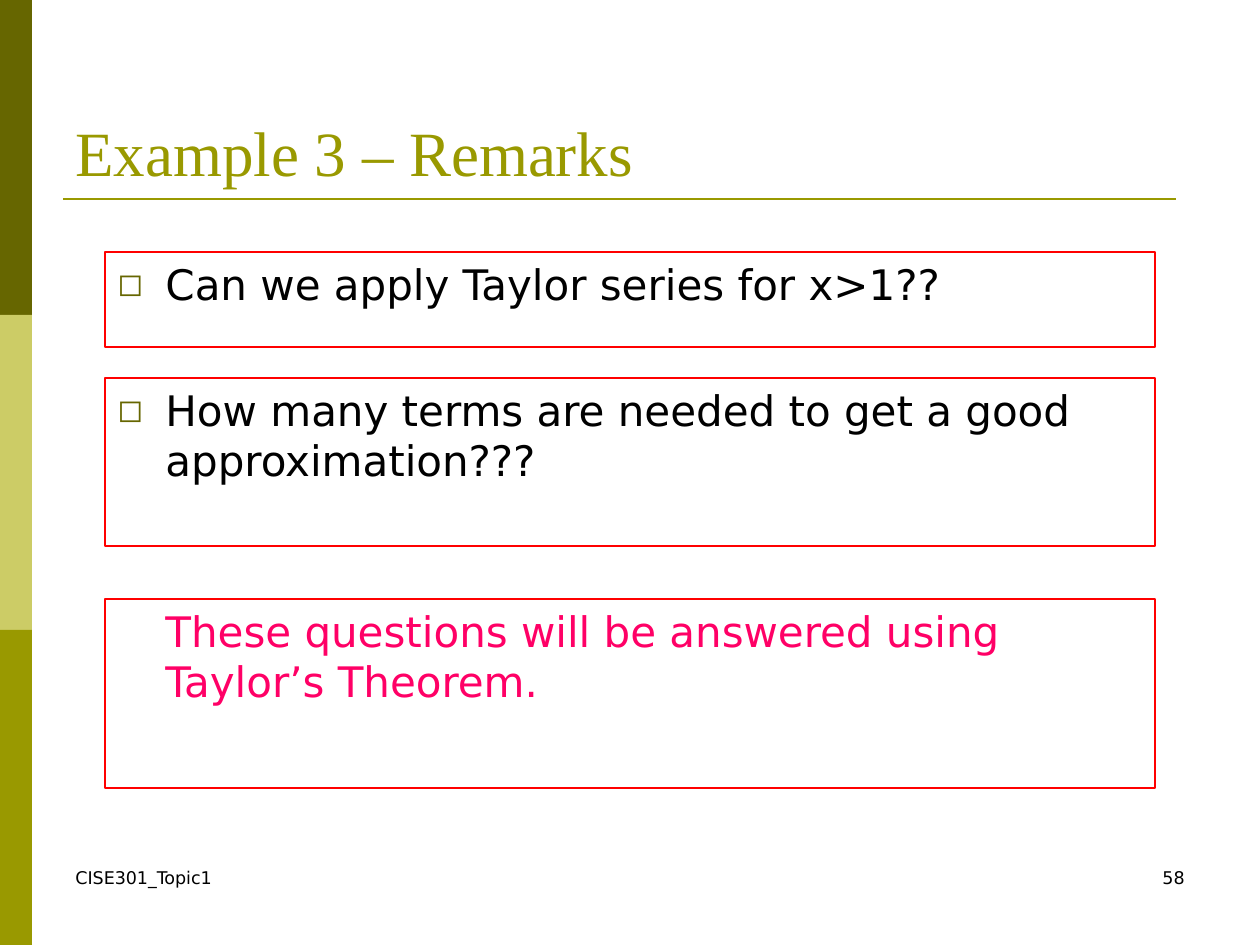
from lxml.etree import SubElement
from pptx import Presentation
from pptx.dml.color import RGBColor
from pptx.enum.shapes import MSO_CONNECTOR, MSO_SHAPE
from pptx.enum.text import MSO_ANCHOR, PP_ALIGN
from pptx.oxml.ns import qn
from pptx.util import Emu, Pt

SCALE = 914400 / 126
COLORS = {
    "dark": "666600",
    "light": "CCCC66",
    "olive": "999900",
    "border": "FF0000",
    "text": "000000",
    "answer": "FF0066",
}


def px(*lengths):
    return [Emu(round(length * SCALE)) for length in lengths]


def write(frame, text, font, size, color, align=PP_ALIGN.LEFT, anchor=MSO_ANCHOR.TOP):
    for name, value in {"word_wrap": True, "vertical_anchor": anchor}.items():
        setattr(frame, name, value)
    paragraph = frame.paragraphs[0]
    paragraph.alignment = align
    run = paragraph.add_run()
    run.text = text
    for name, value in {"name": font, "size": Pt(size)}.items():
        setattr(run.font, name, value)
    run.font.color.rgb = RGBColor.from_string(COLORS[color])
    return paragraph


deck = Presentation()
deck.slide_width, deck.slide_height = px(1260, 945)
slide = deck.slides.add_slide(deck.slide_layouts[6])
shapes = slide.shapes

for index, color in enumerate(["dark", "light", "olive"]):
    band = shapes.add_shape(MSO_SHAPE.RECTANGLE, *px(0, 315 * index, 32, 315))
    band.shadow.inherit = False
    band.fill.solid()
    band.fill.fore_color.rgb = RGBColor.from_string(COLORS[color])
    band.line.fill.background()

title_rule = shapes.add_connector(MSO_CONNECTOR.STRAIGHT, *px(63, 199, 1176, 199))
title_rule.line.width = Pt(1.5)
title_rule.line.color.rgb = RGBColor.from_string(COLORS["olive"])
SubElement(title_rule._element.spPr, qn("a:effectLst"))

labels = [
    ((63, 861, 294, 63), "CISE301_Topic1", "DejaVu Sans", 10, "text", PP_ALIGN.LEFT, MSO_ANCHOR.TOP),
    ((903, 861, 294, 63), "58", "DejaVu Sans", 10, "text", PP_ALIGN.RIGHT, MSO_ANCHOR.TOP),
    ((63, 38, 1134, 157), "Example 3 – Remarks", "Times New Roman", 36, "olive", PP_ALIGN.LEFT, MSO_ANCHOR.BOTTOM),
]
for bounds, *content in labels:
    write(shapes.add_textbox(*px(*bounds)).text_frame, *content)

remarks = [
    (252, 95, "Can we apply Taylor series for x>1??", "text", True),
    (378, 168, "How many terms are needed to get a good approximation???", "text", True),
    (599, 189, "These questions will be answered using Taylor’s Theorem.", "answer", False),
]
for top, height, text, color, bulleted in remarks:
    remark = shapes.add_shape(MSO_SHAPE.RECTANGLE, *px(105, top, 1050, height))
    remark.shadow.inherit = False
    remark.fill.background()
    remark.line.width = Pt(0.75)
    remark.line.color.rgb = RGBColor.from_string(COLORS["border"])
    paragraph = write(remark.text_frame, text, "DejaVu Sans", 24, color)
    paragraph.space_before = Pt(4.8)
    properties = paragraph._p.get_or_add_pPr()
    hanging = px(48)[0]
    properties.set("marL", str(hanging))
    properties.set("indent", str(-hanging if bulleted else 0))
    if bulleted:
        bullet_color = SubElement(properties, qn("a:buClr"))
        SubElement(bullet_color, qn("a:srgbClr"), val=COLORS["dark"])
        SubElement(properties, qn("a:buSzPct"), val="75000")
        SubElement(properties, qn("a:buFont"), typeface="DejaVu Sans")
        SubElement(properties, qn("a:buChar"), char="◻")

deck.save("out.pptx")
